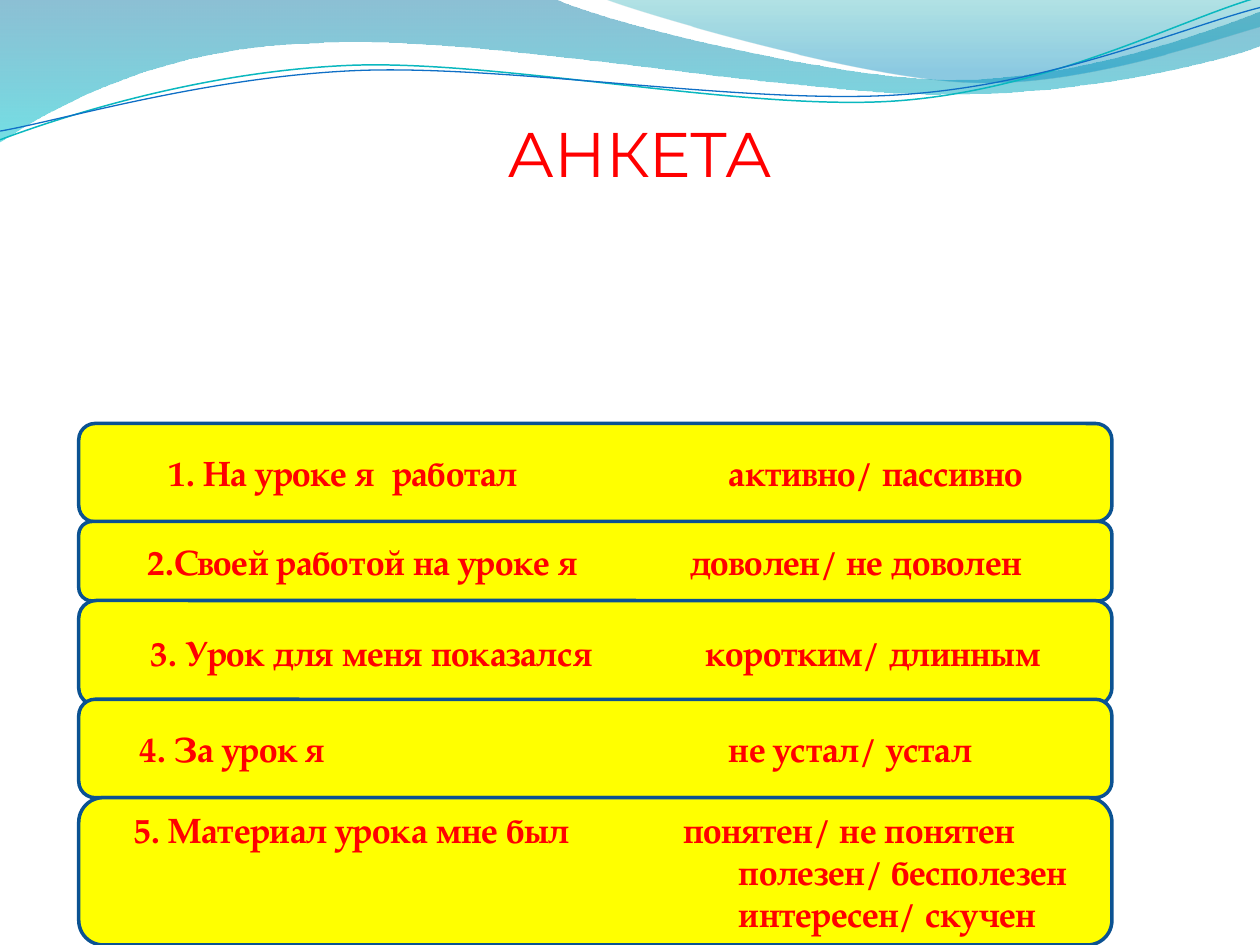
from dataclasses import dataclass
from pptx import Presentation
from pptx.dml.color import RGBColor as RGB
from pptx.enum.shapes import MSO_SHAPE as Preset
from pptx.enum.text import MSO_ANCHOR as Anchor, PP_ALIGN as Align
from pptx.oxml.ns import qn
from pptx.util import Pt
from lxml.etree import SubElement


@dataclass(frozen=True)
class Theme:
    red: str = "FF0000"
    yellow: str = "FFFF00"
    border: str = "0B5292"
    title_font: str = "Montserrat"
    title_size: int = 36
    body_font: str = "TeX Gyre Pagella"
    body_size: int = 20
    # Gradient stops: position, colour, opacity in percent
    wide_wave: tuple = ((0, "0074A1", 45), (1, "00C6CF", 55))
    corner_wave: tuple = ((0, "00A1A9", 30), (0.8, "008BBF", 45))
    teal_line: str = "0AB8BF"
    blue_line: str = "0F6FC6"


THEME = Theme()
CARD_LEFT, CARD_WIDTH = 45, 590.4

# Outlines: a pair is a straight step, six numbers are a Bézier step
WIDE_WAVE = [
    (0, 0), (316.8, -0.7),
    (342.7, 12.2, 478.1, 45.4, 545.8, 45.4), (614.2, 45.4, 689.8, 18.7, 720, 6.5),
    (720.7, 25.9), (707.8, 31.7, 626.4, 54.7, 537.1, 54),
    (447.8, 54, 275, 20.2, 185, 24.5), (92.9, 25.9, 33.1, 59.8, -0.7, 81.4),
]
CORNER_WAVE = [
    (344.9, -0.7), (366.5, 7.9, 491, 44.6, 553.7, 46.8),
    (616.3, 49.7, 691.9, 23, 720, 15.1), (720, 0),
]
TEAL_CURVE = [
    (0, 79.9), (34.6, 67, 113.8, 41, 199.4, 37.4),
    (284.4, 33.8, 427, 64.1, 513.4, 57.6), (599.8, 51.1, 675.4, 10.8, 718.6, -1.4),
]
BLUE_CURVE = [
    (0, 74.9), (33.8, 69.1, 118.1, 43.9, 203.8, 40.3),
    (290.2, 36.7, 429.8, 60.5, 516.2, 54), (601.9, 48.2, 677.5, 15.1, 720, 4.3),
]

# Top, height, question, its x, x of the first answer, answers
QUESTIONS = [
    (242, 56.2, "1. На уроке я  работал", 96.5, 416.5, ["активно/ пассивно"]),
    (298, 45.4, "2.Своей работой на уроке я", 84.5, 394.5, ["доволен/ не доволен"]),
    (343.2, 59.8, "3. Урок для меня показался", 86.2, 403.2, ["коротким/ длинным"]),
    (399.6, 56.2, "4. За урок я", 79.9, 416.5, ["не устал/ устал"]),
    (455.8, 84.2, "5. Материал урока мне был", 76.5, 390.3,
     ["понятен/ не понятен", "полезен/ бесполезен", "интересен/ скучен"]),
]
MORE_ANSWERS_X = 422.2


def add_outline(slide, steps, close):
    """Draw all points as straight lines, then merge Bézier triples into curves."""
    first, *rest = [(Pt(step[i]), Pt(step[i + 1]))
                    for step in steps for i in range(0, len(step), 2)]
    builder = slide.shapes.build_freeform(*first)
    builder.add_line_segments(rest, close=close)
    outline = builder.convert_to_shape()
    outline.shadow.inherit = False

    lines = iter(list(outline._element.iter(qn("a:lnTo"))))
    for step in steps[1:]:
        segment = next(lines)
        if len(step) == 6:
            segment.tag = qn("a:cubicBezTo")
            for line in (next(lines), next(lines)):
                segment.append(line[0])
                line.getparent().remove(line)
    return outline


def add_wave(slide, steps, stops):
    wave = add_outline(slide, steps, close=True)
    wave.line.fill.background()
    wave.fill.gradient()
    wave.fill.gradient_angle = 270
    for stop, (position, color, _) in zip(wave.fill.gradient_stops, stops):
        stop.position = position
        stop.color.rgb = RGB.from_string(color)
    colors = wave._element.spPr.find(qn("a:gradFill")).iter(qn("a:srgbClr"))
    for color, (_, _, opacity) in zip(colors, stops):
        SubElement(color, qn("a:alpha")).set("val", str(opacity * 1000))


def add_curve(slide, steps, color, width):
    curve = add_outline(slide, steps, close=False)
    curve.fill.background()
    curve.line.color.rgb = RGB.from_string(color)
    curve.line.width = Pt(width)


def add_run(paragraph, text, font, size, bold=False):
    run = paragraph.add_run()
    run.text = text
    run.font.name, run.font.size, run.font.bold = font, Pt(size), bold
    run.font.color.rgb = RGB.from_string(THEME.red)


def add_title(slide, text):
    title = slide.shapes.add_textbox(Pt(146.2), Pt(61.9), Pt(438.5), Pt(140.4))
    title.text_frame.word_wrap = False
    paragraph = title.text_frame.paragraphs[0]
    paragraph.alignment = Align.CENTER
    add_run(paragraph, text, THEME.title_font, THEME.title_size)


def add_question(slide, top, height, question, question_x, answer_x, answers):
    card = slide.shapes.add_shape(Preset.FLOWCHART_ALTERNATE_PROCESS, Pt(CARD_LEFT),
                                  Pt(top), Pt(CARD_WIDTH), Pt(height))
    card.shadow.inherit = False
    card.fill.solid()
    card.fill.fore_color.rgb = RGB.from_string(THEME.yellow)
    card.line.color.rgb = RGB.from_string(THEME.border)
    card.line.width = Pt(2)

    # The rounded corners push the text area inwards
    corner_inset = height / 6 * 0.29
    frame = card.text_frame
    frame.word_wrap = True
    frame.vertical_anchor = Anchor.MIDDLE
    frame.margin_left = Pt(question_x - CARD_LEFT - corner_inset)
    frame.margin_right = 0

    for i, answer in enumerate(answers):
        paragraph = frame.add_paragraph() if i else frame.paragraphs[0]
        paragraph.alignment = Align.LEFT
        props = paragraph._p.get_or_add_pPr()
        if i:
            props.set("marL", str(Pt(MORE_ANSWERS_X - question_x)))
            props.set("indent", "0")
            text = answer
        else:
            tab = SubElement(SubElement(props, qn("a:tabLst")), qn("a:tab"))
            tab.set("pos", str(Pt(answer_x - question_x)))
            tab.set("algn", "l")
            text = f"{question}\t{answer}"
        add_run(paragraph, text, THEME.body_font, THEME.body_size, bold=True)


def main():
    deck = Presentation()
    deck.slide_width, deck.slide_height = Pt(720), Pt(540)
    slide = deck.slides.add_slide(deck.slide_layouts[6])

    # Waves along the top
    add_wave(slide, WIDE_WAVE, THEME.wide_wave)
    add_wave(slide, CORNER_WAVE, THEME.corner_wave)
    add_curve(slide, TEAL_CURVE, THEME.teal_line, 0.85)
    add_curve(slide, BLUE_CURVE, THEME.blue_line, 0.75)

    # Heading and survey
    add_title(slide, "АНКЕТА")
    for question in QUESTIONS:
        add_question(slide, *question)

    deck.save("out.pptx")


if __name__ == "__main__":
    main()
